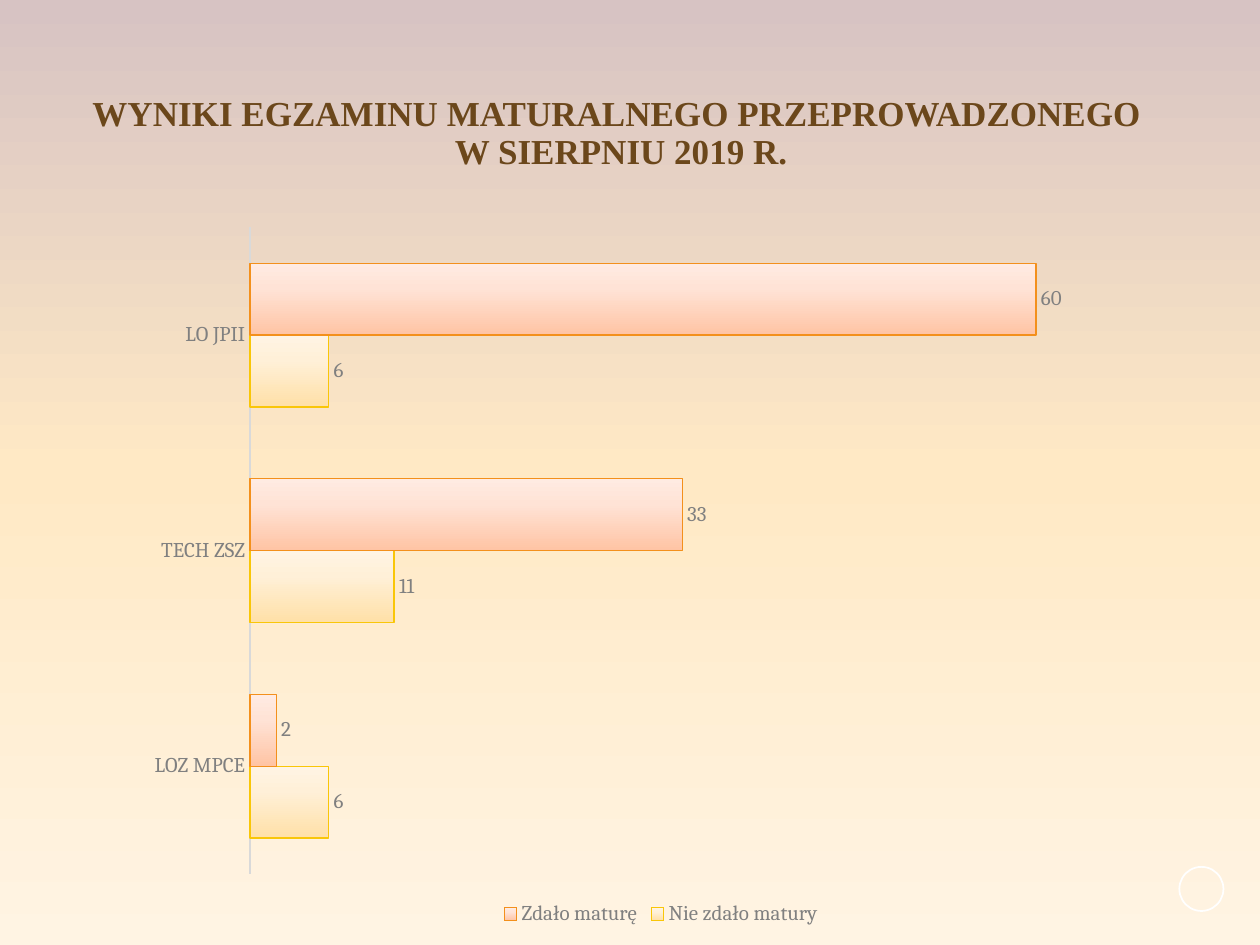
from lxml.etree import SubElement
from pptx import Presentation
from pptx.chart.data import CategoryChartData
from pptx.dml.color import RGBColor
from pptx.enum.chart import XL_CHART_TYPE as ChartType
from pptx.enum.chart import XL_LABEL_POSITION as LabelPosition
from pptx.enum.chart import XL_LEGEND_POSITION as LegendPosition
from pptx.enum.chart import XL_TICK_LABEL_POSITION as TickLabels
from pptx.enum.chart import XL_TICK_MARK as TickMark
from pptx.enum.shapes import MSO_SHAPE as Shape
from pptx.enum.text import MSO_ANCHOR as Anchor
from pptx.enum.text import PP_ALIGN as Align
from pptx.oxml.ns import qn
from pptx.util import Inches, Pt


def color(value):
    return RGBColor.from_string(value)


def paint_gradient(fill, owner, stops, angle):
    """Fill with (percent, colour) stops; the angle runs counter-clockwise."""
    fill.gradient()
    fill.gradient_angle = angle
    stop_list = owner.find(".//" + qn("a:gsLst"))
    for old_stop in list(stop_list):
        stop_list.remove(old_stop)
    for percent, value in stops:
        stop = SubElement(stop_list, qn("a:gs"), pos=str(percent * 1000))
        SubElement(stop, qn("a:srgbClr"), val=value)


deck = Presentation()
deck.slide_width, deck.slide_height = Inches(10), Inches(7.5)
page = deck.slides.add_slide(deck.slide_layouts[6])

# Background
paint_gradient(page.background.fill, page.element,
               [(0, "D7C3C3"), (50, "FFE9C5"), (100, "FFF4E3")], 270)

# Ring in the corner
ring = page.shapes.add_shape(Shape.OVAL, Inches(9.36), Inches(6.88),
                             Inches(0.35), Inches(0.35))
ring.shadow.inherit = False
ring.fill.background()
ring.line.color.rgb = color("FFFFFF")
ring.line.width = Pt(1)

# Title
box = page.shapes.add_textbox(Inches(0.43), Inches(0.44), Inches(9), Inches(1.25))
frame = box.text_frame
frame.word_wrap = True
frame.vertical_anchor = Anchor.MIDDLE
para = frame.paragraphs[0]
para.text = "WYNIKI EGZAMINU MATURALNEGO PRZEPROWADZONEGO \vW SIERPNIU 2019 R."
para.alignment = Align.CENTER
para.line_spacing = 0.9
for span in para.runs:
    for name, value in {"size": Pt(20), "name": "Times New Roman", "bold": True}.items():
        setattr(span.font, name, value)
    span.font.color.rgb = color("6B471B")

# Exam results: name, values, outline, gradient from the bottom up
results = [
    ("Nie zdało matury", (6, 11, 6), "F9C608",
     [(0, "FFE0A7"), (65, "FFF0D8"), (100, "FFF4E4")]),
    ("Zdało maturę", (2, 33, 60), "F3901C",
     [(0, "FFC4A4"), (65, "FFE3D6"), (100, "FFEBE2")]),
]
data = CategoryChartData()
data.categories = ["LOZ MPCE", "TECH ZSZ", "LO JPII"]
for name, values, _, _ in results:
    data.add_series(name, values)

chart = page.shapes.add_chart(ChartType.BAR_CLUSTERED, Inches(1.06), Inches(1.69),
                              Inches(8.37), Inches(5.7), data).chart
chart.has_title = False
chart.font.name, chart.font.size = "Cambria", Pt(10)
plot = chart.plots[0]
plot.gap_width, plot.overlap = 100, 0
plot.vary_by_categories = False

# Axes and legend
schools = chart.category_axis
schools.major_tick_mark = schools.minor_tick_mark = TickMark.NONE
schools.tick_label_position = TickLabels.NEXT_TO_AXIS
schools.format.line.color.rgb = color("D9D9D9")
schools.format.line.width = Pt(0.75)
chart.value_axis.has_major_gridlines = False
chart.value_axis.visible = False
chart.value_axis.minimum_scale = 0
chart.has_legend = True
chart.legend.position = LegendPosition.BOTTOM
chart.legend.include_in_layout = False

# Bars and their values
fonts = [schools.tick_labels.font, chart.legend.font]
for series, (_, _, outline, stops) in zip(plot.series, results):
    paint_gradient(series.format.fill, series._element, stops, 90)
    series.format.line.color.rgb = color(outline)
    series.format.line.width = Pt(0.75)
    labels = series.data_labels
    labels.show_value = True
    labels.position = LabelPosition.OUTSIDE_END
    fonts.append(labels.font)

for font in fonts:
    font.name, font.size = "Cambria", Pt(12)
    font.color.rgb = color("808080")

deck.save("out.pptx")
